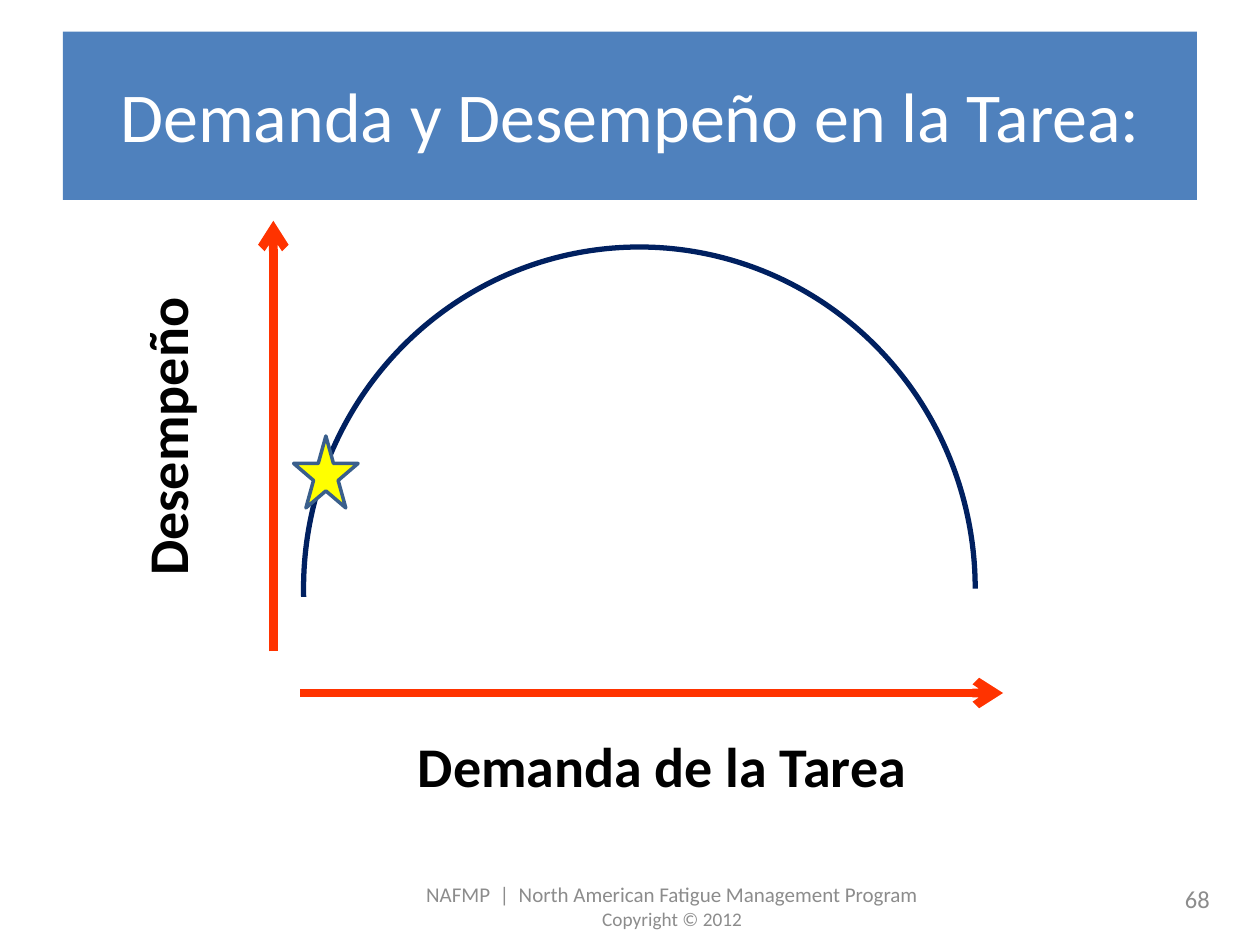
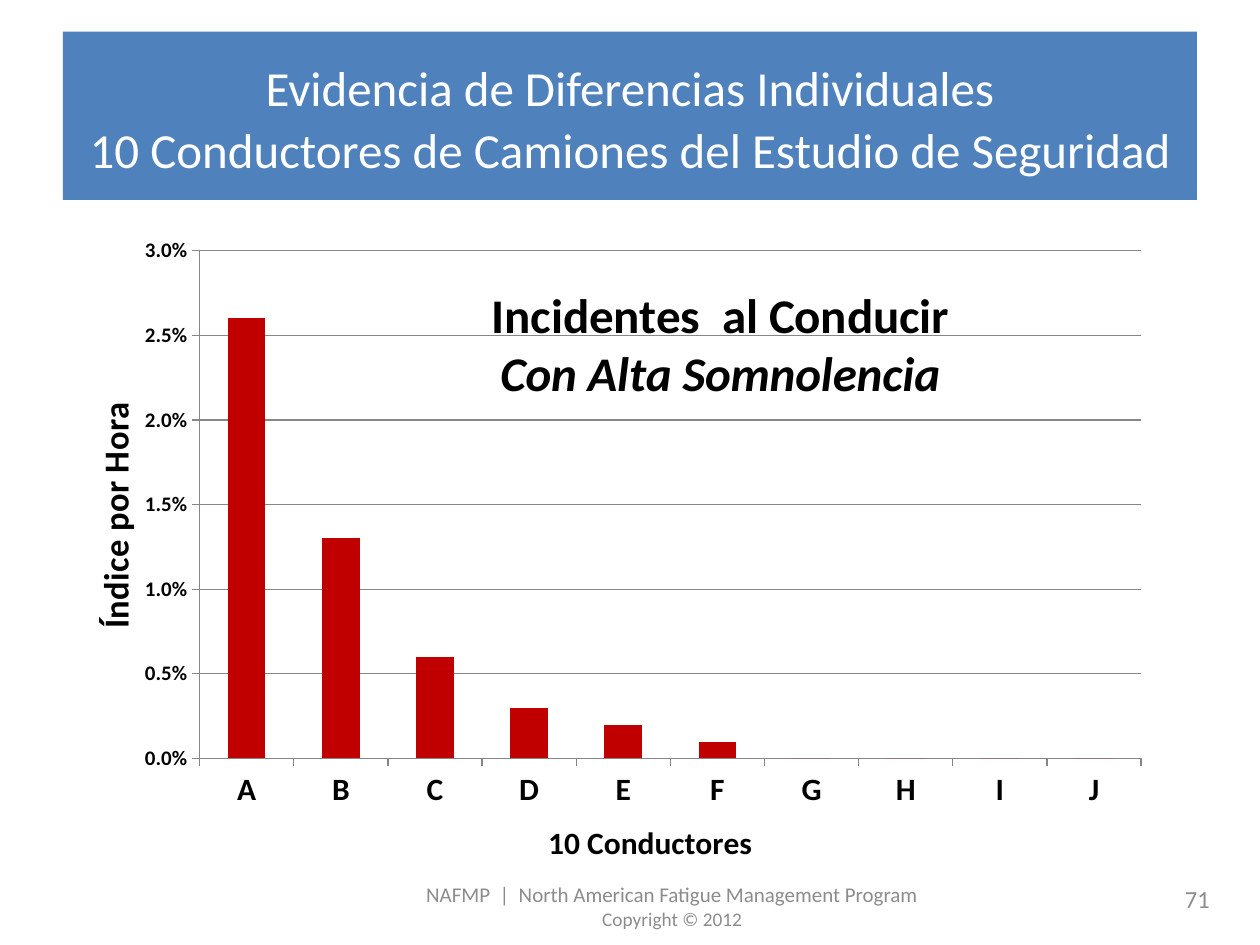
from lxml.etree import SubElement
from pptx import Presentation
from pptx.chart.data import CategoryChartData
from pptx.dml.color import RGBColor
from pptx.enum.chart import XL_CHART_TYPE as ChartType, XL_TICK_MARK as TickMark
from pptx.enum.shapes import MSO_CONNECTOR as Connector, MSO_SHAPE as Shape
from pptx.enum.text import MSO_ANCHOR as Anchor, MSO_AUTO_SIZE as AutoSize, PP_ALIGN as Align
from pptx.oxml.ns import qn
from pptx.util import Cm, Pt

FONT = "Calibri"
BLUE, NAVY, RED, ORANGE = "4F81BD", "002060", "C00000", "FF3300"
YELLOW, STAR_EDGE, GREY = "FFFF00", "3A5F8C", "8C8C8C"
BLACK, WHITE, GRID = "000000", "FFFFFF", "868686"

# Boxes are left, top, width, height in centimetres
BAND = (1.27, 0.64, 22.86, 3.39)
TITLE = (1.27, 0.76, 22.86, 3.18)
FOOTER = (7.62, 17.78, 11.86, 0.97)
NUMBER = (18.72, 17.6, 5.92, 1.02)
FOOTER_LINES = [
    ("NAFMP  |  North American Fatigue Management Program", {"size": 12, "color": GREY}),
    ("Copyright © 2012", {"size": 11, "color": GREY}),
]

DEMAND = {"title": "Demanda y Desempeño en la Tarea:", "size": 40, "spacing": 45.8, "number": "68"}
ARC, ARC_START = (6.12, 4.98, 13.54, 13.77), 107.15
STAR = (5.92, 8.79, 1.3, 1.45)
AXIS_ARROWS = [
    (5.51, 13.13, 5.51, 4.45),
    (6.05, 13.97, 20.22, 13.97),
]
AXIS_LABELS = [
    ("Desempeño", (2.54, 4.78, 1.88, 8.05), True),
    ("Demanda de la Tarea", (7.42, 14.62, 11.86, 1.88), False),
]
AXIS_LABEL_FORMAT = {"size": 32, "bold": True}

DRIVERS = {
    "title": "Evidencia de Diferencias Individuales\v"
             "10 Conductores de Camiones del Estudio de Seguridad",
    "size": 28, "spacing": 35, "number": "71",
}
CHART = (1.47, 4.24, 22.02, 13.34)
RATES = dict(zip("ABCDEFGHIJ", (0.026, 0.013, 0.006, 0.003, 0.002, 0.001, 0, 0, 0, 0)))
CHART_TITLE = [
    ("Incidentes  al Conducir", {"size": 28, "bold": True}),
    ("Con Alta Somnolencia", {"size": 28, "bold": True, "italic": True}),
]
CATEGORY_TITLE = [("10 Conductores", {"size": 18, "bold": True})]
VALUE_TITLE = [("Índice por Hora", {"size": 20, "bold": True})]
VALUE_SCALE = {"minimum_scale": 0, "maximum_scale": 0.03, "major_unit": 0.005,
               "has_major_gridlines": True}


def rgb(color):
    return RGBColor.from_string(color)


def lengths(box):
    return [Cm(value) for value in box]


def set_attributes(target, values):
    for name, value in values.items():
        setattr(target, name, value)


def set_font(font, size, color=BLACK, **values):
    set_attributes(font, {"name": FONT, "size": Pt(size), **values})
    font.color.rgb = rgb(color)


def set_line(line, color, width):
    line.color.rgb = rgb(color)
    line.width = Pt(width)


def write(frame, lines, align=Align.CENTER):
    """Fill a text frame with one paragraph per (text, format) pair."""
    for index, (text, values) in enumerate(lines):
        paragraph = frame.add_paragraph() if index else frame.paragraphs[0]
        paragraph.alignment = align
        run = paragraph.add_run()
        run.text = text
        set_font(run.font, **values)


def add_text(slide, box, lines, align=Align.CENTER, anchor=Anchor.TOP):
    text_box = slide.shapes.add_textbox(*lengths(box))
    set_attributes(text_box.text_frame, {"word_wrap": True, "vertical_anchor": anchor})
    write(text_box.text_frame, lines, align)
    return text_box


def add_figure(slide, kind, box, fill=None, edge=None, width=1):
    shape = slide.shapes.add_shape(kind, *lengths(box))
    shape.shadow.inherit = False
    if fill:
        shape.fill.solid()
        shape.fill.fore_color.rgb = rgb(fill)
    else:
        shape.fill.background()
    if edge:
        set_line(shape.line, edge, width)
    else:
        shape.line.fill.background()
    return shape


def add_arrow(slide, ends):
    arrow = slide.shapes.add_connector(Connector.STRAIGHT, *lengths(ends))
    set_line(arrow.line, ORANGE, 5)
    properties = arrow._element.spPr
    SubElement(properties.find(qn("a:ln")), qn("a:tailEnd"), type="arrow")
    SubElement(properties, qn("a:effectLst"))


def add_slide(presentation, content):
    """Add a slide with the band, title, footer and number that all slides share."""
    slide = presentation.slides.add_slide(presentation.slide_layouts[5])
    title = slide.shapes.title
    band = add_figure(slide, Shape.RECTANGLE, BAND, BLUE)
    title._element.addprevious(band._element)
    set_attributes(title, dict(zip(("left", "top", "width", "height"), lengths(TITLE))))
    frame = title.text_frame
    set_attributes(frame, {"auto_size": AutoSize.NONE, "word_wrap": True,
                           "vertical_anchor": Anchor.MIDDLE, "text": content["title"]})
    paragraph = frame.paragraphs[0]
    set_attributes(paragraph, {"alignment": Align.CENTER,
                               "line_spacing": Pt(content["spacing"])})
    for run in paragraph.runs:
        set_font(run.font, content["size"], WHITE)
    add_text(slide, FOOTER, FOOTER_LINES, anchor=Anchor.MIDDLE)
    add_text(slide, NUMBER, [(content["number"], {"size": 14, "color": GREY})],
             Align.RIGHT, Anchor.MIDDLE)
    return slide


def place(element, **fractions):
    """Fix a chart part at fractions of the chart's size."""
    layout = element.find(qn("c:layout"))
    if layout is None:
        layout = SubElement(element, qn("c:layout"))
        element.insert(0, layout)
    manual = SubElement(layout, qn("c:manualLayout"))
    if "w" in fractions:
        SubElement(manual, qn("c:layoutTarget"), val="inner")
    for side in "xy":
        SubElement(manual, qn(f"c:{side}Mode"), val="edge")
    for name, value in fractions.items():
        SubElement(manual, qn(f"c:{name}"), val=str(value))


def add_rate_chart(slide):
    data = CategoryChartData(number_format="0.0%")
    data.categories = list(RATES)
    data.add_series("Series 1", list(RATES.values()))
    chart = slide.shapes.add_chart(ChartType.COLUMN_CLUSTERED, *lengths(CHART), data).chart
    set_font(chart.font, 10)
    chart.has_legend = False

    plot = chart.plots[0]
    set_attributes(plot, {"gap_width": 150, "vary_by_categories": False})
    fill = plot.series[0].format.fill
    fill.solid()
    fill.fore_color.rgb = rgb(RED)
    place(chart._chartSpace.chart.plotArea, x=0.116, y=0.062, w=0.862, h=0.78)

    category_axis, value_axis = chart.category_axis, chart.value_axis
    set_attributes(value_axis, VALUE_SCALE)
    set_attributes(value_axis.tick_labels,
                   {"number_format": "0.0%", "number_format_is_linked": False})
    set_line(value_axis.major_gridlines.format.line, GRID, 0.75)
    for axis, size in ((category_axis, 18), (value_axis, 12)):
        axis.major_tick_mark = TickMark.OUTSIDE
        set_line(axis.format.line, GRID, 0.75)
        set_font(axis.tick_labels.font, size, bold=True)

    for title, lines, x, y in (
        (chart.chart_title, CHART_TITLE, 0.38, 0.11),
        (category_axis.axis_title, CATEGORY_TITLE, 0.43, 0.93),
        (value_axis.axis_title, VALUE_TITLE, 0.01, 0.29),
    ):
        write(title.text_frame, lines)
        place(title._element, x=x, y=y)
    chart.chart_title._element.find(qn("c:overlay")).set("val", "1")


def build_demand_slide(presentation):
    slide = add_slide(presentation, DEMAND)
    arc = add_figure(slide, Shape.ARC, ARC, edge=NAVY, width=3)
    arc.adjustments[0], arc.adjustments[1] = ARC_START, 0
    add_figure(slide, Shape.STAR_5_POINT, STAR, YELLOW, STAR_EDGE, 2)
    for ends in AXIS_ARROWS:
        add_arrow(slide, ends)
    for text, box, upright in AXIS_LABELS:
        label = add_text(slide, box, [(text, AXIS_LABEL_FORMAT)])
        if upright:
            label._element.txBody.find(qn("a:bodyPr")).set("vert", "vert270")


def main():
    presentation = Presentation()
    presentation.slide_width, presentation.slide_height = Cm(25.4), Cm(19.05)
    build_demand_slide(presentation)
    add_rate_chart(add_slide(presentation, DRIVERS))
    presentation.save("out.pptx")


if __name__ == "__main__":
    main()
